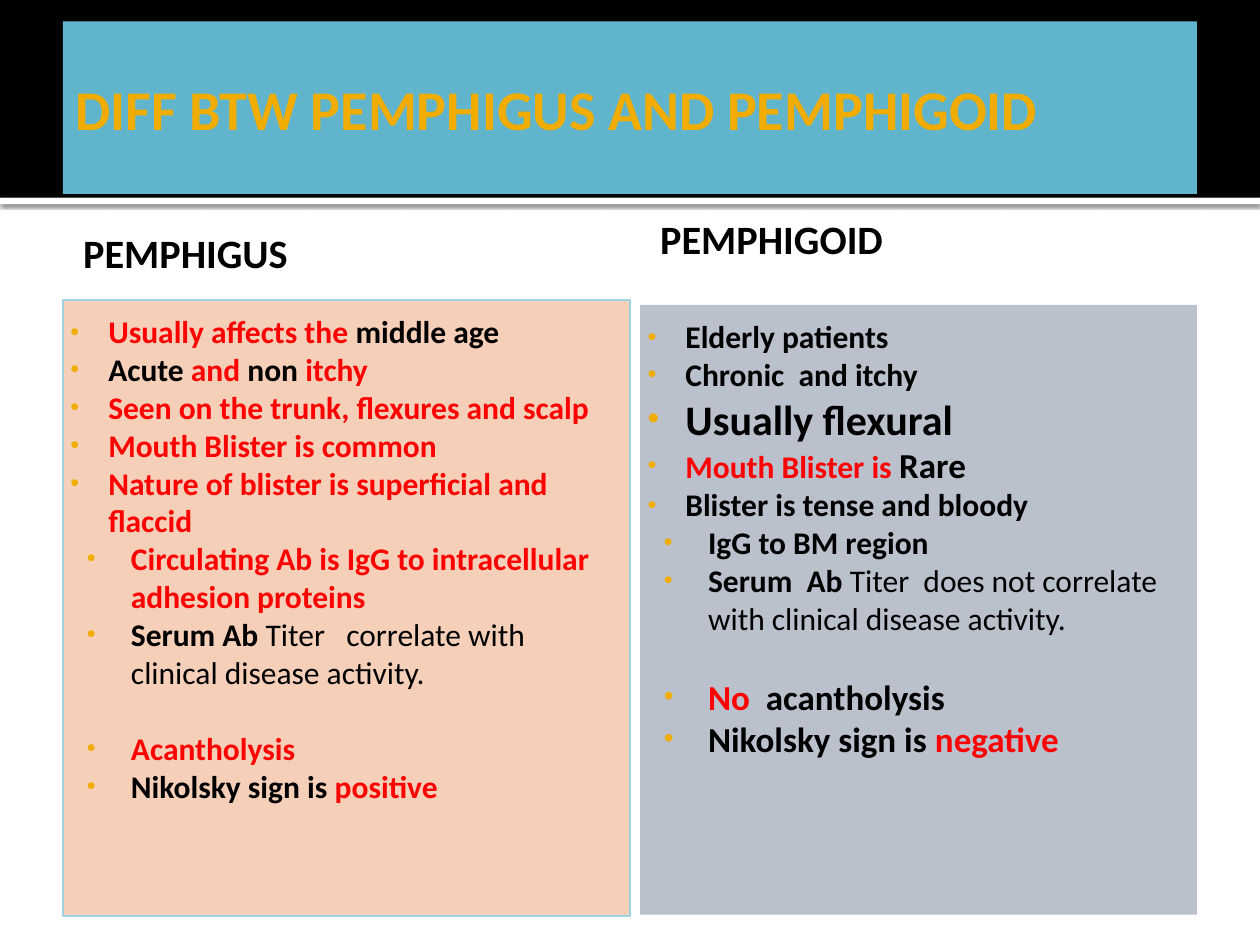
from lxml.etree import SubElement
from pptx import Presentation
from pptx.dml.color import RGBColor
from pptx.enum.shapes import MSO_SHAPE
from pptx.enum.text import MSO_ANCHOR, PP_ALIGN
from pptx.oxml.ns import qn
from pptx.util import Inches, Pt

COLUMNS, ROWS = 10, 7.5
BLACK, RED, GOLD = "000000", "FF0000", "F0AD00"
BODY_SIZE = 18
LEVELS = ((0.3, -0.3), (0.48, -0.35))  # left margin and first-line indent


def color(value):
    return RGBColor.from_string(value)


def run(text, tint=BLACK, size=BODY_SIZE, bold=True):
    return text, tint, size, bold


def red(text, size=BODY_SIZE):
    return run(text, RED, size)


class SlideBuilder:
    font = "Calibri"

    def __init__(self, presentation):
        self.slide = presentation.slides.add_slide(presentation.slide_layouts[6])
        self.column = presentation.slide_width / COLUMNS
        self.row = presentation.slide_height / ROWS

    def place(self, left, top, width, height):
        return [int(left * self.column), int(top * self.row),
                int(width * self.column), int(height * self.row)]

    def panel(self, area, fill, line=None):
        shape = self.slide.shapes.add_shape(MSO_SHAPE.RECTANGLE, *self.place(*area))
        shape.shadow.inherit = False
        shape.fill.solid()
        shape.fill.fore_color.rgb = color(fill)
        if line:
            shape.line.color.rgb = color(line)
            shape.line.width = Pt(0.75)
        else:
            shape.line.fill.background()
        return shape

    def drop_shadow(self, shape):
        effects = shape._element.spPr.find(qn("a:effectLst"))
        shadow = SubElement(effects, qn("a:outerShdw"), blurRad=str(Pt(2.5)),
                            dist=str(Pt(0.8)), dir="5400000", rotWithShape="0")
        tint = SubElement(shadow, qn("a:srgbClr"), val=BLACK)
        SubElement(tint, qn("a:alpha"), val="60000")

    def frame(self, shape, insets, anchor):
        frame = shape.text_frame
        frame.word_wrap = True
        frame.vertical_anchor = anchor
        (frame.margin_left, frame.margin_top,
         frame.margin_right, frame.margin_bottom) = map(Inches, insets)
        return frame

    def add_runs(self, paragraph, runs):
        paragraph.alignment = PP_ALIGN.LEFT
        for text, tint, size, bold in runs:
            piece = paragraph.add_run()
            piece.text = text
            piece.font.name = self.font
            piece.font.size = Pt(size)
            piece.font.bold = bold
            piece.font.color.rgb = color(tint)

    def title(self, area, fill, text):
        frame = self.frame(self.panel(area, fill), (0.1, 0.05, 0.05, 0.05), MSO_ANCHOR.MIDDLE)
        self.add_runs(frame.paragraphs[0], [run(text, GOLD, 32)])

    def heading(self, area, text):
        box = self.slide.shapes.add_textbox(*self.place(*area))
        frame = self.frame(box, (0.16, 0.1, 0.1, 0.05), MSO_ANCHOR.MIDDLE)
        self.add_runs(frame.paragraphs[0], [run(text, size=23)])

    def bullet(self, paragraph, level):
        margin, indent = LEVELS[level]
        properties = paragraph._p.get_or_add_pPr()
        properties.set("marL", str(Inches(margin)))
        properties.set("indent", str(Inches(indent)))
        tint = SubElement(properties, qn("a:buClr"))
        SubElement(tint, qn("a:srgbClr"), val=GOLD)
        SubElement(properties, qn("a:buSzPct"), val="80000")
        SubElement(properties, qn("a:buFont"), typeface="Arial")
        SubElement(properties, qn("a:buChar"), char="•")

    def bullet_panel(self, area, fill, groups, line=None):
        """Each group is (level, space before in points, items)."""
        frame = self.frame(self.panel(area, fill, line), (0.06, 0.1, 0.1, 0.05), MSO_ANCHOR.TOP)
        paragraph = None
        for level, gap, items in groups:
            for index, runs in enumerate(items):
                paragraph = frame.paragraphs[0] if paragraph is None else frame.add_paragraph()
                self.bullet(paragraph, level)
                paragraph.space_before = Pt(0 if index else gap)
                self.add_runs(paragraph, runs)


PEMPHIGUS = [
    (0, 0, [
        [red("Usually affects the "), run("middle age")],
        [run("Acute"), red(" and "), run("non"), red(" itchy")],
        [red("Seen on the trunk, flexures and scalp")],
        [red("Mouth Blister is common")],
        [red("Nature of blister is superficial and flaccid")],
    ]),
    (1, 0, [
        [red("Circulating Ab is IgG to intracellular adhesion proteins")],
        [run("Serum Ab "),
         run("Titer   correlate with clinical disease activity.", bold=False)],
    ]),
    (1, 22, [
        [red("Acantholysis")],
        [run("Nikolsky sign is "), red("positive")],
    ]),
]

PEMPHIGOID = [
    (0, 0, [
        [run("Elderly patients")],
        [run("Chronic  and itchy")],
        [run("Usually flexural", size=24)],
        [red("Mouth Blister is "), run("Rare", size=20)],
        [run("Blister is tense and bloody")],
    ]),
    (1, 0, [
        [run("IgG to BM region")],
        [run("Serum  Ab "),
         run("Titer  does not correlate with clinical disease activity.", bold=False)],
    ]),
    (1, 22, [
        [red("No  ", 20), run("acantholysis", size=20)],
        [run("Nikolsky sign is ", size=20), red("negative", 20)],
    ]),
]


def main():
    presentation = Presentation()
    presentation.slide_width = Inches(COLUMNS)
    presentation.slide_height = Inches(ROWS)
    builder = SlideBuilder(presentation)

    # Header band with its shaded white edge
    edge = builder.panel((0, 1.57, COLUMNS, 0.05), "FFFFFF")
    builder.drop_shadow(edge)
    builder.panel((0, 0, COLUMNS, 1.57), BLACK)
    builder.title((0.5, 0.17, 9, 1.37), "60B5CC", "DIFF BTW PEMPHIGUS AND PEMPHIGOID")

    # Left comparison column
    builder.heading((0.5, 1.68, 4.42, 0.59), "PEMPHIGUS")
    builder.bullet_panel((0.5, 2.38, 4.5, 4.89), "F6CFB9", PEMPHIGUS, line="A0D3E0")

    # Right comparison column
    builder.heading((5.08, 1.48, 4.42, 0.78), "PEMPHIGOID")
    builder.bullet_panel((5.08, 2.42, 4.42, 4.84), "BAC0CC", PEMPHIGOID)

    presentation.save("out.pptx")


if __name__ == "__main__":
    main()
